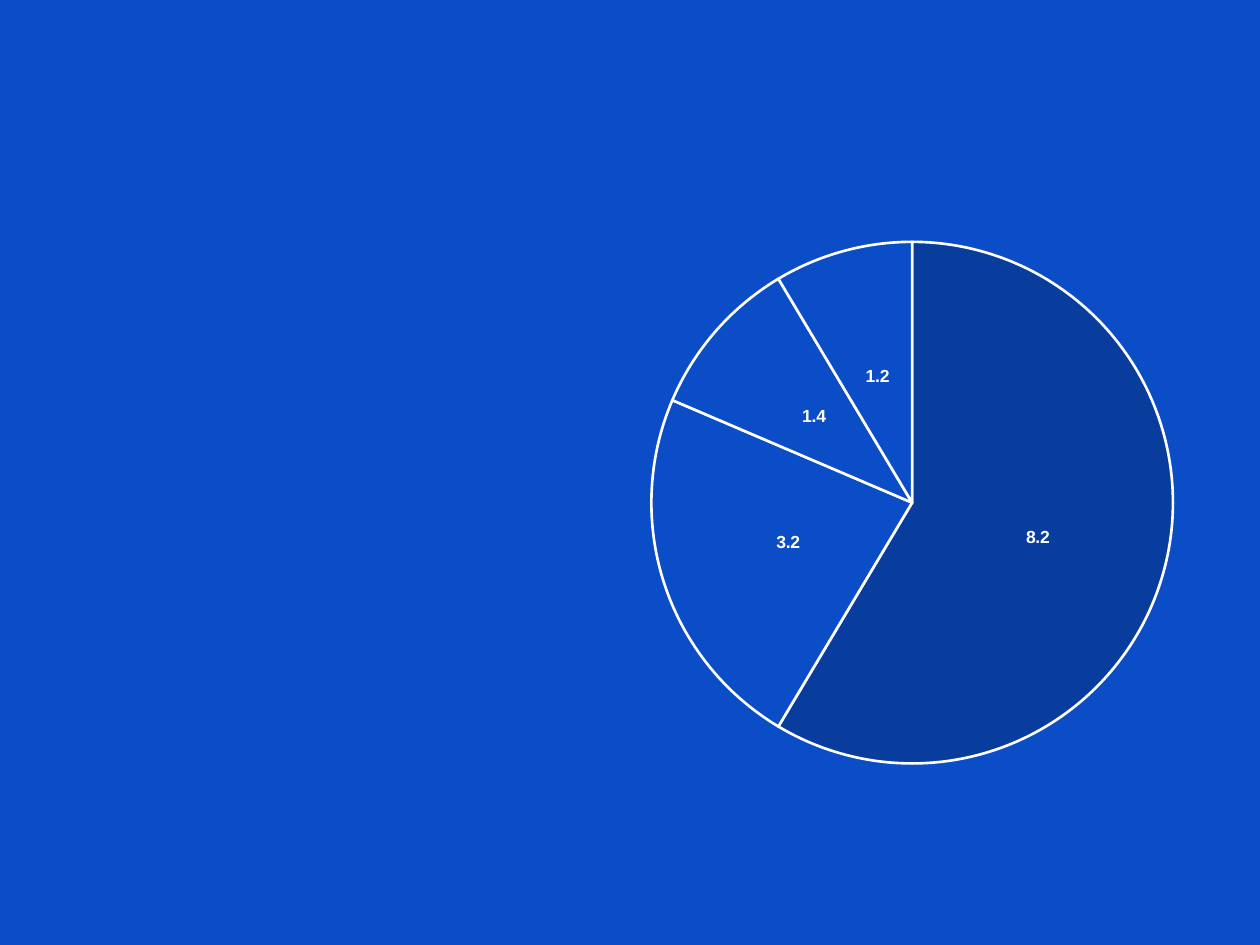
import pptx
import pptx.chart.data
import pptx.dml.color
import pptx.enum.chart
import pptx.oxml
import pptx.oxml.ns
import pptx.util

Inches, Pt = pptx.util.Inches, pptx.util.Pt
RGBColor = pptx.dml.color.RGBColor

BLUE = RGBColor(0x0B, 0x4D, 0xC7)
NAVY = RGBColor(0x09, 0x3D, 0x9D)
WHITE = RGBColor(0xFF, 0xFF, 0xFF)
BLACK = RGBColor(0, 0, 0)

SLICES = [("1", 8.2, NAVY), ("2", 3.2, BLUE), ("3", 1.4, BLUE), ("4", 1.2, BLUE)]
CHART_BOX = (5, 1.79, 4.47, 4.42)
PIE_LEFT, PIE_TOP, PIE_DIAMETER = 5.17, 1.92, 4.14


def format_font(font, color, **values):
    for name, value in {"name": "Arial", "size": Pt(10), **values}.items():
        setattr(font, name, value)
    font.color.rgb = color


def place_pie(chart):
    """Fix the pie inside the chart frame with a manual inner layout."""
    left, top, width, height = CHART_BOX
    fractions = {
        "x": (PIE_LEFT - left) / width,
        "y": (PIE_TOP - top) / height,
        "w": PIE_DIAMETER / width,
        "h": PIE_DIAMETER / height,
    }
    settings = {"layoutTarget": "inner", "xMode": "edge", "yMode": "edge"}
    settings.update((key, f"{value:.4f}") for key, value in fractions.items())
    items = "".join(f'<c:{key} val="{value}"/>' for key, value in settings.items())
    layout = pptx.oxml.parse_xml(
        f'<c:layout {pptx.oxml.ns.nsdecls("c")}>'
        f"<c:manualLayout>{items}</c:manualLayout></c:layout>"
    )
    plot_area = chart.plots[0]._element.getparent()
    for old_layout in plot_area.findall(pptx.oxml.ns.qn("c:layout")):
        plot_area.remove(old_layout)
    plot_area.insert(0, layout)


def add_pie(slide):
    data = pptx.chart.data.CategoryChartData()
    data.categories = [category for category, _, _ in SLICES]
    data.add_series("Series 1", [value for _, value, _ in SLICES])
    chart = slide.shapes.add_chart(
        pptx.enum.chart.XL_CHART_TYPE.PIE, *map(Inches, CHART_BOX), data
    ).chart
    chart.has_title = False
    chart.has_legend = False
    format_font(chart.font, BLACK)
    place_pie(chart)

    plot = chart.plots[0]
    plot.vary_by_categories = False
    series = plot.series[0]
    for index, (_, _, color) in enumerate(SLICES):
        slice_format = series.points[index].format
        slice_format.fill.solid()
        slice_format.fill.fore_color.rgb = color
        slice_format.line.color.rgb = WHITE
        slice_format.line.width = Pt(1.5)

    labels = series.data_labels
    labels.show_value = True
    labels.number_format = "0.0"
    labels.number_format_is_linked = False
    labels.position = pptx.enum.chart.XL_LABEL_POSITION.CENTER
    format_font(labels.font, WHITE, bold=True)


def main():
    presentation = pptx.Presentation()
    presentation.slide_width = Inches(10)
    presentation.slide_height = Inches(7.5)
    slide = presentation.slides.add_slide(presentation.slide_layouts[6])
    slide.background.fill.solid()
    slide.background.fill.fore_color.rgb = BLUE
    add_pie(slide)
    presentation.save("out.pptx")


if __name__ == "__main__":
    main()
